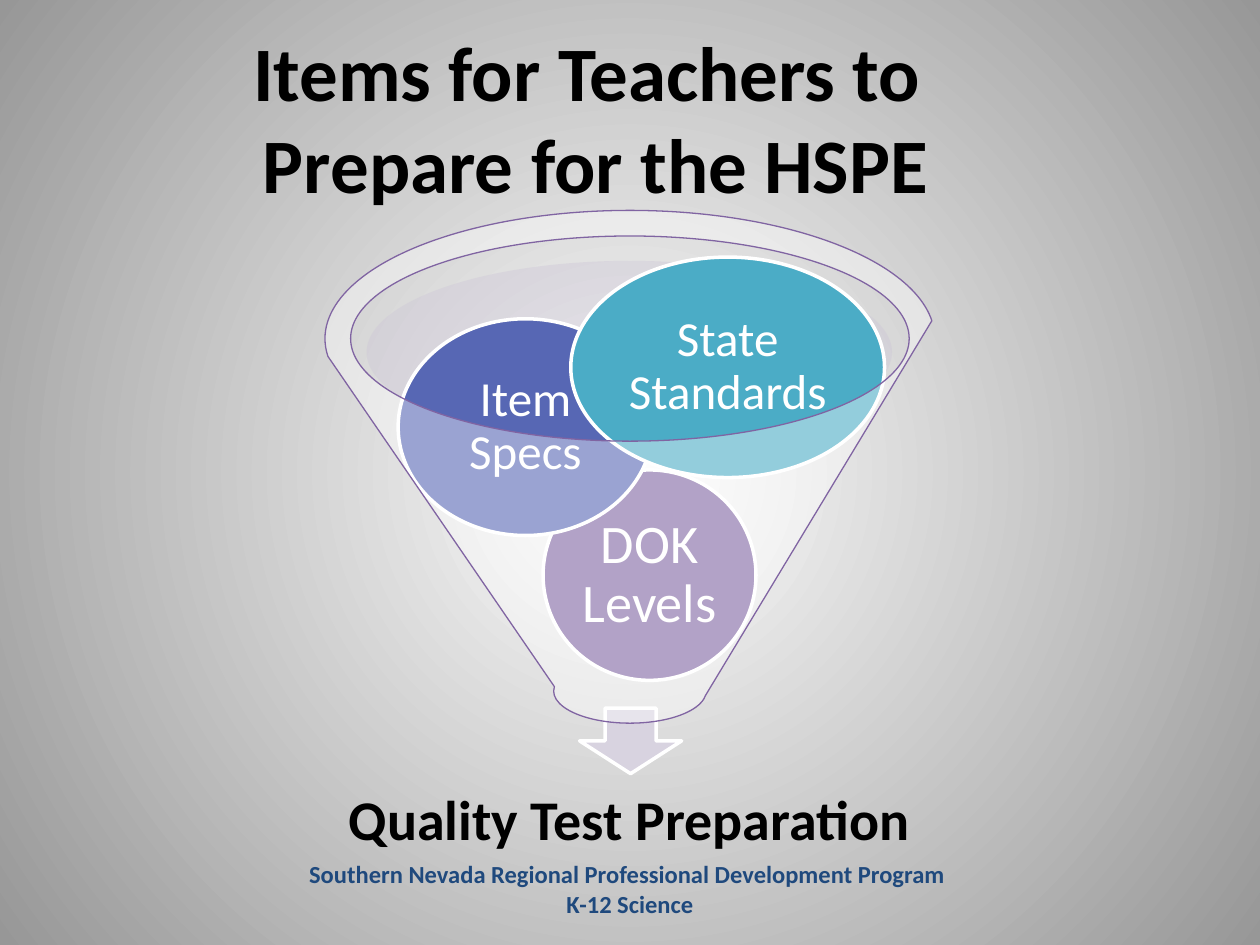
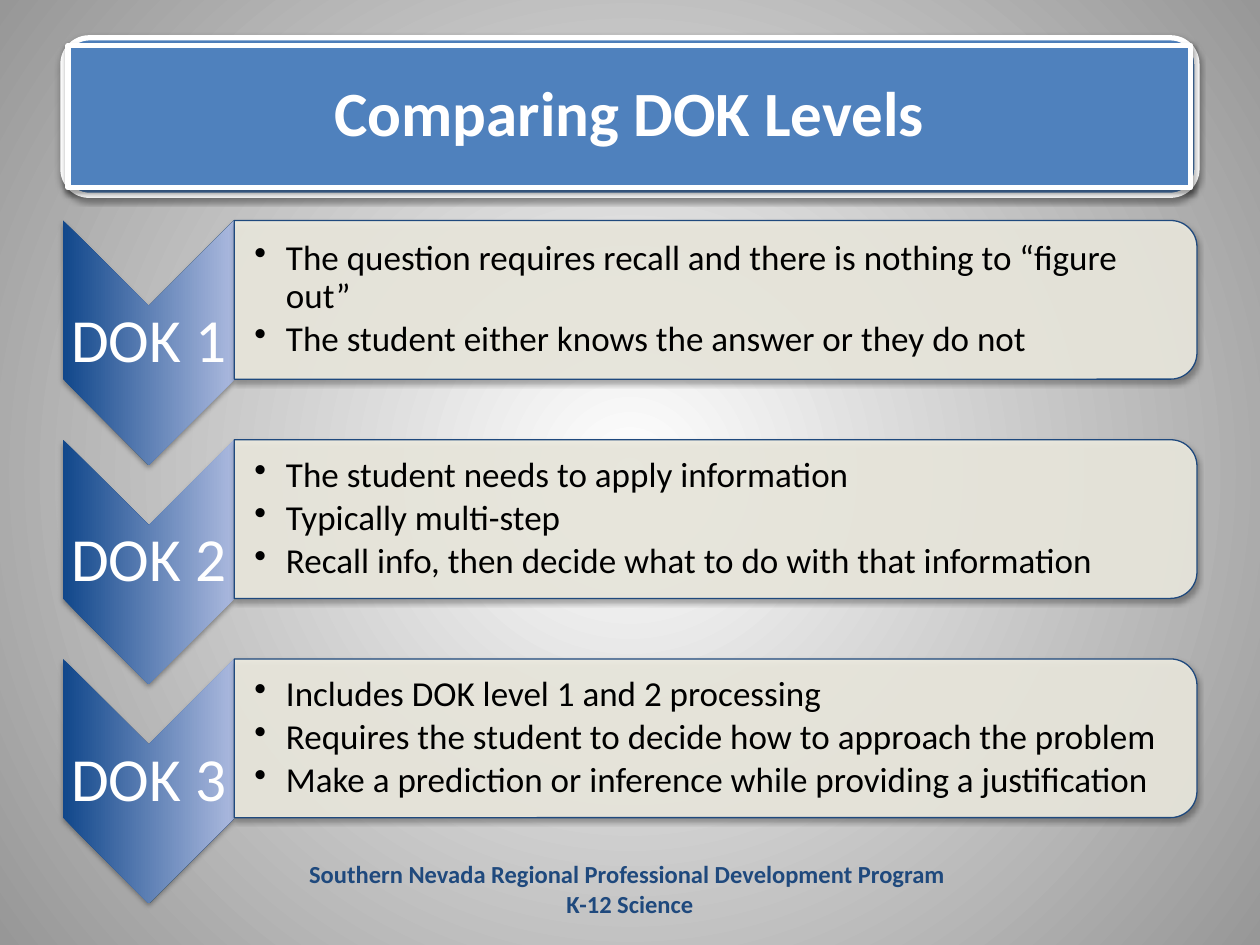
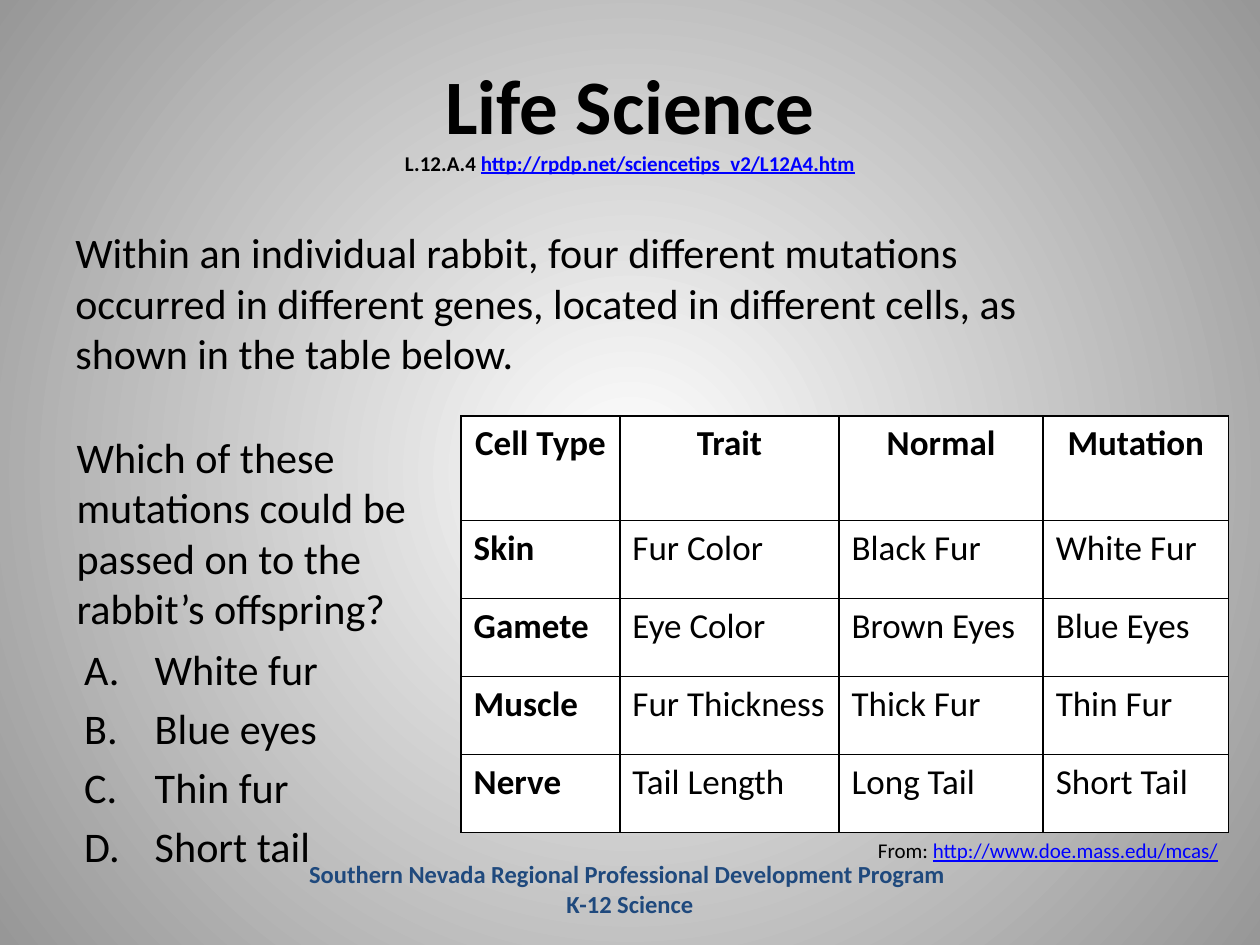
from lxml import etree
from pptx import Presentation
from pptx import util as u
from pptx.dml import color
from pptx.enum import shapes, text
from pptx.oxml import ns, parse_xml

COLORS = {
    "black": "000000", "white": "FFFFFF", "edge": "979797", "navy": "1F497D",
    "link": "0000FF", "purple": "8064A2", "indigo": "5767B4", "teal": "4BACC6",
    "mouth": "CDC6D7", "arrow": "D8D3E0", "deep": "11478B", "pale": "ABB9DE",
    "cream": "EEECE1", "banner": "4F81BD",
}
RGB = {name: color.RGBColor.from_string(value) for name, value in COLORS.items()}
A = 'xmlns:a="http://schemas.openxmlformats.org/drawingml/2006/main"'
Inches, Pt, SHAPE = u.Inches, u.Pt, shapes.MSO_SHAPE
CENTER, MIDDLE = text.PP_ALIGN.CENTER, text.MSO_ANCHOR.MIDDLE
LINK = {"color": "link", "underline": True}


def write(frame, paragraphs, font, layout=None, margin=None, anchor=None, bullet=None):
    """Fill a frame; each paragraph is a string or a list of (text, font changes)."""
    frame.word_wrap = True
    if anchor is not None:
        frame.vertical_anchor = anchor
    for side, inset in zip(("left", "top", "right", "bottom"), margin or ()):
        setattr(frame, "margin_" + side, Inches(inset))
    for index, runs in enumerate(paragraphs):
        paragraph = frame.add_paragraph() if index else frame.paragraphs[0]
        if bullet:
            left, hang, mark = bullet
            properties = paragraph._p.get_or_add_pPr()
            properties.set("marL", str(Inches(left)))
            properties.set("indent", str(Inches(hang)))
            if mark:
                properties.append(parse_xml(mark))
        for name, value in (layout or {}).items():
            if index or name != "space_before":
                setattr(paragraph, name, value)
        for words, changes in [(runs, {})] if isinstance(runs, str) else runs:
            for part, line in enumerate(words.split("\n")):
                if part:
                    paragraph.add_line_break()
                if not line:
                    continue
                run = paragraph.add_run()
                run.text = line
                style = {"name": "Calibri", "color": "black", **font, **changes}
                run.font.color.rgb = RGB[style.pop("color")]
                for name, value in style.items():
                    setattr(run.font, name, value)


def draw(slide, kind, box, fill, line=None, width=0, alpha=None, shadow=None):
    """Add a preset shape; a pair of fill colours makes a vertical gradient."""
    shape = slide.shapes.add_shape(kind, *map(Inches, box))
    shape.shadow.inherit = False
    if isinstance(fill, tuple):
        shape.fill.gradient()
        shape.fill.gradient_angle = 90
        for stop, name in zip(shape.fill.gradient_stops, fill):
            stop.color.rgb = RGB[name]
    else:
        shape.fill.solid()
        shape.fill.fore_color.rgb = RGB[fill]
    if alpha:
        tint = shape._element.spPr.find(ns.qn("a:solidFill"))[0]
        etree.SubElement(tint, ns.qn("a:alpha"), val=str(alpha * 1000))
    if line:
        shape.line.color.rgb = RGB[line]
        shape.line.width = Pt(width)
    else:
        shape.line.fill.background()
    if shadow:
        shape._element.spPr.find(ns.qn("a:effectLst")).append(parse_xml(
            f'<a:outerShdw {A} blurRad="40000" dist="{Pt(1.7)}" dir="5400000" rotWithShape="0">'
            f'<a:srgbClr val="{COLORS["black"]}"><a:alpha val="{shadow * 1000}"/></a:srgbClr>'
            '</a:outerShdw>'))
    return shape


prs = Presentation()
prs.slide_width, prs.slide_height = Inches(10), Inches(7.5)
funnel_slide, levels_slide, rabbit_slide = [
    prs.slides.add_slide(prs.slide_layouts[6]) for _ in range(3)]

# Shared background and footer, kept on the master
master = prs.slide_master
backdrop = master.background.fill
backdrop.gradient()
for stop, name in zip(backdrop.gradient_stops, ("white", "edge")):
    stop.color.rgb = RGB[name]
linear = next(master.element.cSld.iter(ns.qn("a:lin")))
linear.getparent().replace(linear, parse_xml(
    f'<a:path {A} path="circle"><a:fillToRect l="50000" t="50000" r="50000" b="50000"/></a:path>'))

footer = funnel_slide.shapes.add_textbox(*map(Inches, (1.5, 6.77, 7, 0.58)))
write(footer.text_frame,
      ["Southern Nevada Regional Professional Development Program ", "K-12 Science"],
      {"size": Pt(14), "bold": True, "color": "navy"}, {"alignment": CENTER})
master.shapes._spTree.append(footer._element)

# Titles
title_font = {"size": Pt(44), "bold": True}
titles = [
    (funnel_slide, 8.46, "Items for Teachers to \nPrepare for the HSPE"),
    (rabbit_slide, 9, [("Life Science\n", {}), ("L.12.A.4 ", {"size": Pt(12)}),
                       ("http://rpdp.net/sciencetips_v2/L12A4.htm", {"size": Pt(12), **LINK})]),
]
for slide, width, words in titles:
    title = slide.shapes.add_textbox(*map(Inches, (0.5, 0.3, width, 1.25)))
    write(title.text_frame, [words], title_font, {"alignment": CENTER}, anchor=MIDDLE)

# Slide 1: funnel of preparation items
tight = {"alignment": CENTER, "line_spacing": 0.9}
draw(funnel_slide, SHAPE.OVAL, (2.91, 2.07, 4.17, 1.45), "mouth", alpha=40)
draw(funnel_slide, SHAPE.DOWN_ARROW, (4.6, 5.62, 0.81, 0.52), "arrow", "white", 2)
outcome = funnel_slide.shapes.add_textbox(*map(Inches, (2.16, 6.04, 5.67, 0.97)))
write(outcome.text_frame, ["Quality Test Preparation"], {"size": Pt(32), "bold": True},
      tight, [0.25] * 4, MIDDLE)
items = [
    ("DOK Levels", (4.31, 3.73, 1.69, 1.67), "purple", 31),
    ("Item Specs", (3.16, 2.53, 2.02, 1.72), "indigo", 28),
    ("State Standards", (4.53, 2.04, 2.49, 1.75), "teal", 28),
]
for words, box, fill, size in items:
    item = draw(funnel_slide, SHAPE.OVAL, box, fill, "white", 2)
    write(item.text_frame, [words], {"size": Pt(size), "color": "white"},
          tight, [0.04] * 4, MIDDLE)
draw(funnel_slide, SHAPE.FUNNEL, (2.58, 1.67, 4.84, 4.07), "white", "purple", 0.75, alpha=40)

# Slide 2: one chevron and panel per level
levels = [
    ["The question requires recall and there is nothing to “figure out”",
     "The student either knows the answer or they do not"],
    ["The student needs to apply information",
     "Typically multi-step",
     "Recall info, then decide what to do with that information"],
    ["Includes DOK level 1 and 2 processing",
     "Requires the student to decide how to approach the problem",
     "Make a prediction or inference while providing a justification"],
]
dot = f'<a:buChar {A} char="•"/>'
pitch = 1.74
for index, points in enumerate(levels):
    drop = index * pitch
    chevron = draw(levels_slide, SHAPE.CHEVRON, (0.21, 2.04 + drop, 1.94, 1.36),
                   ("deep", "pale"), shadow=35)
    chevron.rotation = 90
    label = levels_slide.shapes.add_textbox(*map(Inches, (0.5, 2.43 + drop, 1.36, 0.58)))
    write(label.text_frame, [f"DOK {index + 1}"], {"size": Pt(35), "color": "white"},
          tight, [0.02] * 4, MIDDLE)
    panel = draw(levels_slide, SHAPE.ROUND_2_SAME_RECTANGLE, (5.05, -1.44 + drop, 1.26, 7.64),
                 "cream", "navy", 0.75, alpha=90, shadow=35)
    panel.rotation = 90
    details = levels_slide.shapes.add_textbox(*map(Inches, (1.86, 1.81 + drop, 7.58, 1.14)))
    write(details.text_frame, points, {"size": Pt(20)},
          {"line_spacing": 0.9, "space_after": Pt(3)},
          (0.16, 0.01, 0.01, 0.01), MIDDLE, (0.25, -0.25, dot))

# Slide 2: banner
draw(levels_slide, SHAPE.ROUNDED_RECTANGLE, (0.5, 0.3, 9, 1.25), "banner", "white", 3, shadow=38)
banner = draw(levels_slide, SHAPE.RECTANGLE, (0.54, 0.36, 8.91, 1.13),
              "banner", "white", 3, shadow=38)
write(banner.text_frame, ["Comparing DOK Levels"],
      {"size": Pt(36), "bold": True, "color": "white"}, tight, [0.15] * 4, MIDDLE)

# Slide 3: question and answers
question = rabbit_slide.shapes.add_textbox(*map(Inches, (0.13, 3.3, 3.63, 1.8)))
write(question.text_frame,
      ["Which of these mutations could be passed on to the rabbit’s offspring?"],
      {"size": Pt(24.1)}, margin=(0.1, 0.12, 0.1, 0.05), bullet=(0.38, 0, None))
answers = rabbit_slide.shapes.add_textbox(*map(Inches, (0.13, 5.06, 3.63, 1.81)))
write(answers.text_frame, ["White fur", "Blue eyes", "Thin fur", "Short tail"],
      {"size": Pt(24.1)}, {"space_before": Pt(4.8)},
      bullet=(1, -0.56, f'<a:buAutoNum {A} type="alphaUcPeriod"/>'))

# Slide 3: mutation table
mutations = [
    ("Cell Type", "Trait", "Normal", "Mutation"),
    ("Skin", "Fur Color", "Black Fur", "White Fur"),
    ("Gamete", "Eye Color", "Brown Eyes", "Blue Eyes"),
    ("Muscle", "Fur Thickness", "Thick Fur", "Thin Fur"),
    ("Nerve", "Tail Length", "Long Tail", "Short Tail"),
]
traits = rabbit_slide.shapes.add_table(5, 4, *map(Inches, (3.66, 3.3, 6.09, 3.31))).table
traits.first_row = traits.horz_banding = False
for column, width in zip(traits.columns, (1.26, 1.74, 1.62, 1.47)):
    column.width = Inches(width)
for r, row in enumerate(mutations):
    traits.rows[r].height = Inches(0.62 if r else 0.83)
    for c, words in enumerate(row):
        cell = traits.cell(r, c)
        write(cell.text_frame, [words], {"size": Pt(20), "bold": r == 0 or c == 0},
              {} if r else {"alignment": CENTER})
        borders = cell._tc.get_or_add_tcPr()
        for side in ("lnL", "lnR", "lnT", "lnB"):
            borders.append(parse_xml(
                f'<a:{side} {A} w="{Pt(1)}"><a:solidFill><a:srgbClr val="{COLORS["black"]}"/>'
                f'</a:solidFill></a:{side}>'))
        cell.fill.solid()
        cell.fill.fore_color.rgb = RGB["white"]

# Slide 3: introduction and source
intro = rabbit_slide.shapes.add_textbox(*map(Inches, (0.5, 1.75, 8.1, 1.31)))
write(intro.text_frame,
      ["Within an individual rabbit, four different mutations occurred in different genes, "
       "located in different cells, as shown in the table below."], {"size": Pt(24)})
credit = rabbit_slide.shapes.add_textbox(*map(Inches, (6.87, 6.6, 3.03, 0.3)))
write(credit.text_frame, [[("From: ", {}), ("http://www.doe.mass.edu/mcas/", LINK)]],
      {"size": Pt(12)})

prs.save("out.pptx")
